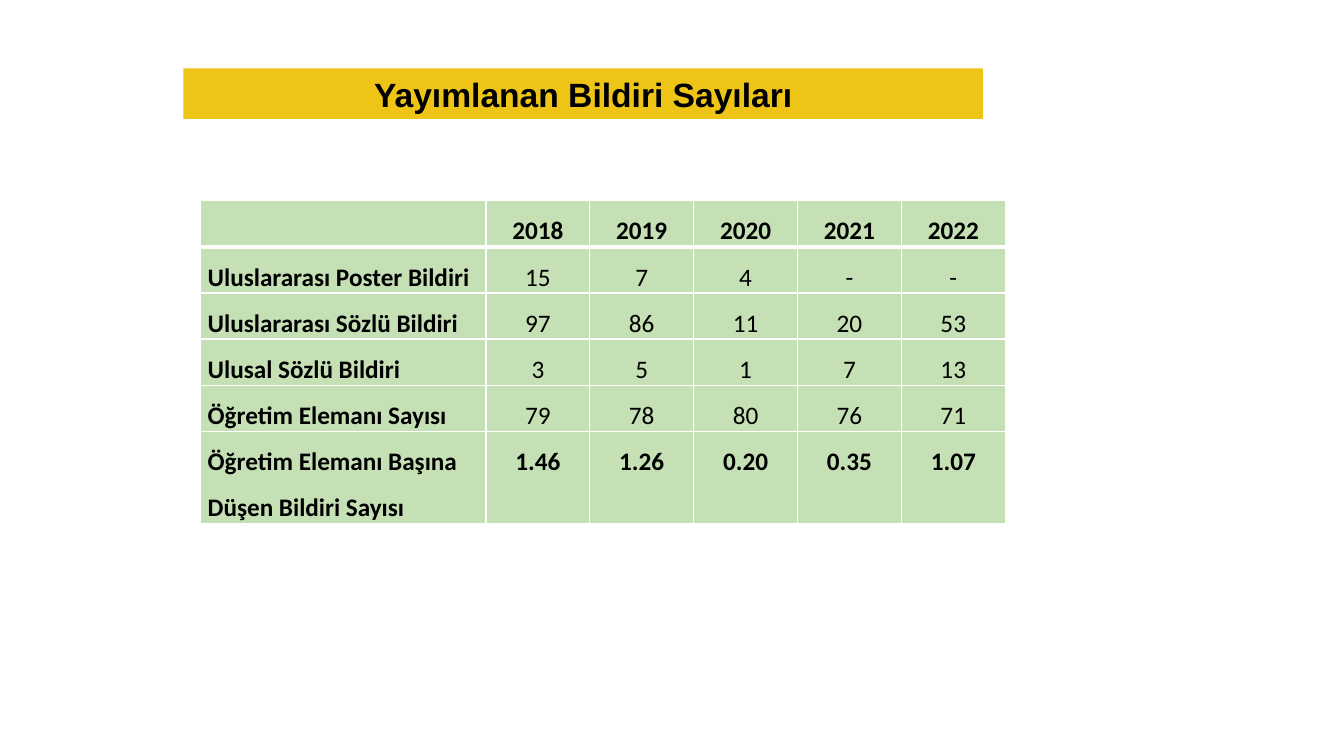
from lxml import etree
from pptx import Presentation
from pptx.dml.color import RGBColor
from pptx.enum.shapes import MSO_SHAPE
from pptx.enum.text import MSO_ANCHOR, PP_ALIGN
from pptx.oxml.ns import qn
from pptx.util import Inches, Pt

RECT = MSO_SHAPE.RECTANGLE
MIDDLE = MSO_ANCHOR.MIDDLE
LEFT, CENTER = PP_ALIGN.LEFT, PP_ALIGN.CENTER
BLACK = RGBColor(0x00, 0x00, 0x00)
WHITE = RGBColor(0xFF, 0xFF, 0xFF)
GOLD = RGBColor(0xEE, 0xC4, 0x16)
GREEN = RGBColor(0xC5, 0xE0, 0xB4)

ROWS = [
    ["", "2018", "2019", "2020", "2021", "2022"],
    ["Uluslararası Poster Bildiri", "15", "7", "4", "-", "-"],
    ["Uluslararası Sözlü Bildiri", "97", "86", "11", "20", "53"],
    ["Ulusal Sözlü Bildiri", "3", "5", "1", "7", "13"],
    ["Öğretim Elemanı Sayısı", "79", "78", "80", "76", "71"],
    ["Öğretim Elemanı Başına Düşen Bildiri Sayısı",
     "1.46", "1.26", "0.20", "0.35", "1.07"],
]
LAST = len(ROWS) - 1
WIDTHS = [2.83] + [1.03] * 5
HEIGHT = 0.38
INSETS = {"margin_left": Inches(0.07), "margin_right": Inches(0.07),
          "margin_top": 0, "margin_bottom": 0}


def style(para, name, size, bold, align):
    para.alignment = align
    font = para.font
    for key, value in {"name": name, "size": Pt(size), "bold": bold}.items():
        setattr(font, key, value)
    font.color.rgb = BLACK
    for run in para.runs:
        run.font.name = name


def edge(cell, side, width):
    """Draw one white border of a cell; side is L, R, T or B."""
    props = cell._tc.get_or_add_tcPr()
    line = etree.SubElement(props, qn("a:ln" + side), w=str(Pt(width)))
    fill = etree.SubElement(line, qn("a:solidFill"))
    etree.SubElement(fill, qn("a:srgbClr"), val=str(WHITE))


deck = Presentation()
deck.slide_width, deck.slide_height = Inches(13.33), Inches(7.5)
slide = deck.slides.add_slide(deck.slide_layouts[6])

# Table of papers by year
frame = slide.shapes.add_table(
    len(ROWS), len(WIDTHS), Inches(1.99), Inches(1.99),
    Inches(sum(WIDTHS)), Inches(HEIGHT * len(ROWS)))
table = frame.table
table.first_row = table.horz_banding = False
for col, width in zip(table.columns, WIDTHS):
    col.width = Inches(width)

for r, row in enumerate(ROWS):
    table.rows[r].height = Inches(HEIGHT)
    for c, text in enumerate(row):
        cell = table.cell(r, c)
        for key, value in INSETS.items():
            setattr(cell, key, value)
        for side in "LRTB":
            thick = (r, side) in [(0, "B"), (1, "T")]
            edge(cell, side, 3 if thick else 1)
        cell.fill.solid()
        cell.fill.fore_color.rgb = GREEN
        cell.text = text
        para = cell.text_frame.paragraphs[0]
        para.line_spacing = 1.5
        style(para, "Calibri", 18, c == 0 or r in (0, LAST),
              CENTER if c else LEFT)

# Title bar
bar = slide.shapes.add_shape(
    RECT, Inches(1.82), Inches(0.68), Inches(7.93), Inches(0.5))
bar.shadow.inherit = False
bar.fill.solid()
bar.fill.fore_color.rgb = GOLD
bar.line.fill.background()
body = bar.text_frame
body.word_wrap = True
body.vertical_anchor = MIDDLE
body.text = "Yayımlanan Bildiri Sayıları"
style(body.paragraphs[0], "Arial", 24, True, CENTER)

deck.save("out.pptx")
